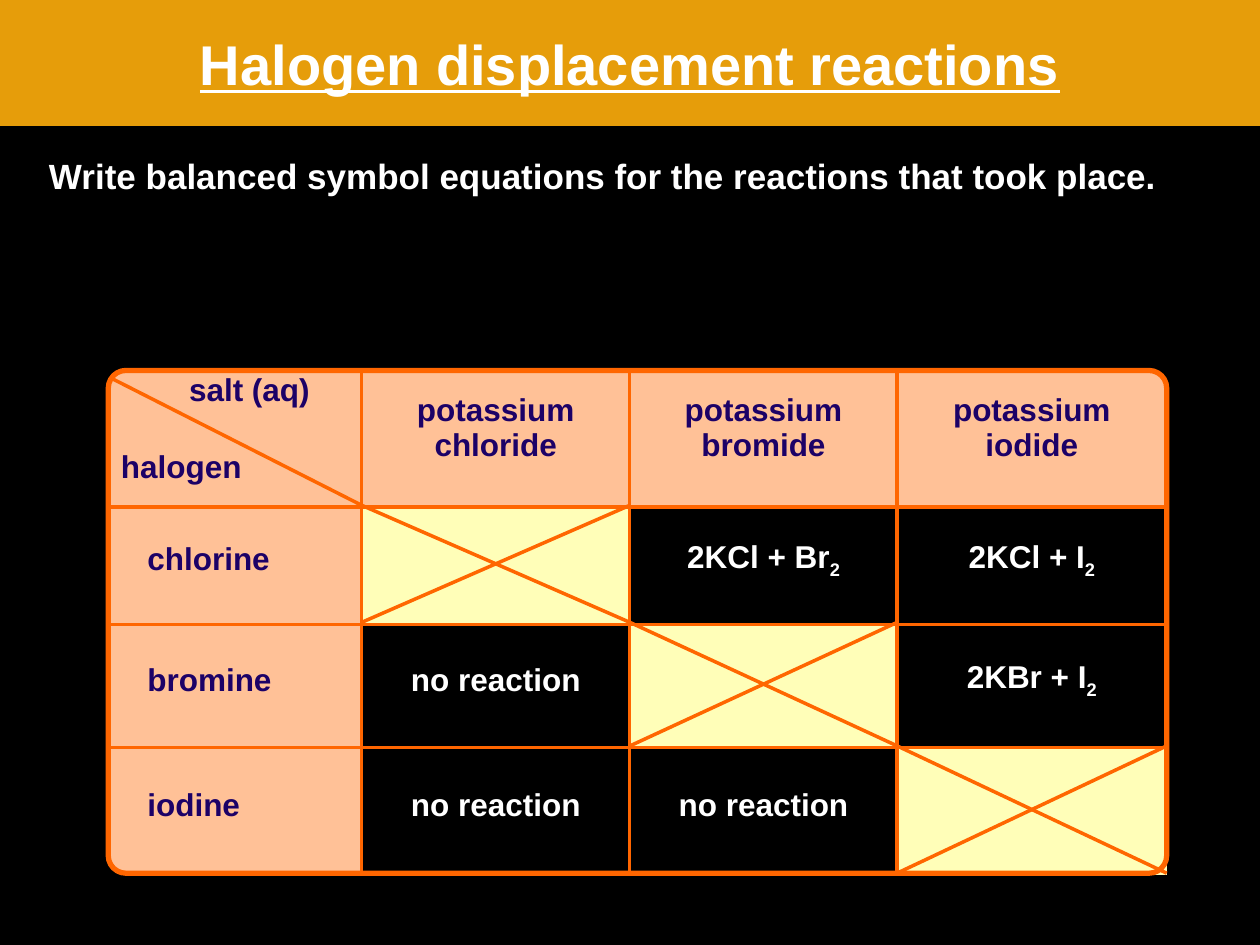
from lxml.etree import SubElement
from pptx import Presentation
from pptx.dml.color import RGBColor
from pptx.enum.shapes import MSO_CONNECTOR, MSO_SHAPE
from pptx.enum.text import MSO_ANCHOR, PP_ALIGN
from pptx.oxml.ns import qn
from pptx.util import Inches, Pt

BLACK, WHITE, NAVY = "000000", "FFFFFF", "1C0167"
GOLD, ORANGE, PEACH, CREAM = "E69D0A", "FF6600", "FFC197", "FFFEB8"

COLUMN_EDGES = [0.86, 2.87, 5, 7.12, 9.26]
ROW_EDGES = [2.94, 4.01, 4.94, 5.92, 6.93]
SALTS = ["potassium\vchloride", "potassium\vbromide", "potassium\viodide"]
# A None entry is a crossed-out cell; a trailing digit becomes a subscript.
REACTIONS = {
    "chlorine": [None, "2KCl + Br2", "2KCl + I2"],
    "bromine": ["no reaction", None, "2KBr + I2"],
    "iodine": ["no reaction", "no reaction", None],
}


def color(hex_string):
    return RGBColor.from_string(hex_string)


def format_font(font, size, hex_string):
    font.name = "Arial"
    font.size = Pt(size)
    font.bold = True
    font.color.rgb = color(hex_string)


def format_paragraph(paragraph, size, hex_string, alignment=PP_ALIGN.LEFT):
    paragraph.alignment = alignment
    for run in paragraph.runs:
        format_font(run.font, size, hex_string)


def add_title(slide, text):
    banner = slide.shapes.add_shape(
        MSO_SHAPE.RECTANGLE, 0, 0, Inches(10), Inches(1))
    banner.shadow.inherit = False
    banner.fill.solid()
    banner.fill.fore_color.rgb = color(GOLD)
    banner.line.fill.background()
    banner.text_frame.text = text
    banner.text_frame.vertical_anchor = MSO_ANCHOR.MIDDLE
    paragraph = banner.text_frame.paragraphs[0]
    format_paragraph(paragraph, 32, WHITE, PP_ALIGN.CENTER)
    paragraph.runs[0].font.underline = True


def add_instruction(slide, text):
    box = slide.shapes.add_textbox(
        Inches(0.29), Inches(1.18), Inches(9.52), Inches(0.44))
    box.text_frame.word_wrap = True
    box.text_frame.text = text
    format_paragraph(box.text_frame.paragraphs[0], 20, WHITE)


def add_rounded_panel(slide, fill=None, line=None):
    """Add a rounded rectangle around the whole grid."""
    left, top = COLUMN_EDGES[0], ROW_EDGES[0]
    panel = slide.shapes.add_shape(
        MSO_SHAPE.ROUNDED_RECTANGLE, Inches(left), Inches(top),
        Inches(COLUMN_EDGES[-1] - left), Inches(ROW_EDGES[-1] - top))
    panel.adjustments[0] = 0.035
    panel.shadow.inherit = False
    if fill:
        panel.fill.solid()
        panel.fill.fore_color.rgb = color(fill)
    else:
        panel.fill.background()
    if line:
        panel.line.color.rgb = color(line)
        panel.line.width = Pt(3)
    else:
        panel.line.fill.background()


def add_diagonal(slide, start, end):
    diagonal = slide.shapes.add_connector(
        MSO_CONNECTOR.STRAIGHT, *map(Inches, start + end))
    diagonal.line.color.rgb = color(ORANGE)
    diagonal.line.width = Pt(2)
    SubElement(diagonal._element.spPr, qn("a:effectLst"))


def set_borders(cell, sides):
    """Draw the named sides (L, R, T, B) and leave the others empty."""
    properties = cell._tc.get_or_add_tcPr()
    for index, side in enumerate("LRTB"):
        border = properties.makeelement(qn(f"a:ln{side}"), {"w": str(Pt(2))})
        if side in sides:
            fill = SubElement(border, qn("a:solidFill"))
            SubElement(fill, qn("a:srgbClr"), val=ORANGE)
        else:
            SubElement(border, qn("a:noFill"))
        properties.insert(index, border)


def set_cell(cell, text, hex_string, alignment=PP_ALIGN.CENTER,
             fill=None, left=0.1, bottom=0.09):
    cell.margin_left, cell.margin_right = Inches(left), Inches(0.1)
    cell.margin_top, cell.margin_bottom = 0, Inches(bottom)
    cell.vertical_anchor = MSO_ANCHOR.MIDDLE
    if fill:
        cell.fill.solid()
        cell.fill.fore_color.rgb = color(fill)
    else:
        cell.fill.background()
    cell.text_frame.text = text
    for paragraph in cell.text_frame.paragraphs:
        format_paragraph(paragraph, 18, hex_string, alignment)


def set_formula(cell, text):
    """Write white cell text, lowering a trailing digit."""
    base = text.rstrip("0123456789")
    set_cell(cell, base, WHITE, fill=BLACK)
    if base != text:
        subscript = cell.text_frame.paragraphs[0].add_run()
        subscript.text = text[len(base):]
        format_font(subscript.font, 18, WHITE)
        subscript.font._element.set("baseline", "-25000")


def set_corner_cell(cell):
    set_cell(cell, "salt (aq)\nhalogen", NAVY, PP_ALIGN.LEFT, bottom=0.15)
    salt, halogen = cell.text_frame.paragraphs
    salt._p.get_or_add_pPr().set("marL", str(Inches(0.54)))
    halogen.space_before = Pt(24)


def add_reaction_table(slide):
    left, top = COLUMN_EDGES[0], ROW_EDGES[0]
    frame = slide.shapes.add_table(
        4, 4, Inches(left), Inches(top),
        Inches(COLUMN_EDGES[-1] - left), Inches(ROW_EDGES[-1] - top))
    table = frame.table
    table.first_row = table.horz_banding = False
    for index in range(4):
        table.columns[index].width = Inches(
            COLUMN_EDGES[index + 1] - COLUMN_EDGES[index])
        table.rows[index].height = Inches(
            ROW_EDGES[index + 1] - ROW_EDGES[index])

    set_corner_cell(table.cell(0, 0))
    for column, salt in enumerate(SALTS, 1):
        set_cell(table.cell(0, column), salt, NAVY, bottom=0.17)
    for row, (halogen, results) in enumerate(REACTIONS.items(), 1):
        set_cell(table.cell(row, 0), halogen, NAVY, PP_ALIGN.LEFT, left=0.31)
        for column, result in enumerate(results, 1):
            cell = table.cell(row, column)
            if result is None:
                set_cell(cell, "", NAVY, fill=CREAM)
            else:
                set_formula(cell, result)

    for row in range(4):
        for column in range(4):
            inner = {"L": column > 0, "R": column < 3,
                     "T": row > 0, "B": row < 3}
            set_borders(table.cell(row, column),
                        [side for side in inner if inner[side]])


def add_diagonals(slide):
    """Split the corner cell and cross out the cells without a reaction."""
    add_diagonal(slide, (0.88, 3), (COLUMN_EDGES[1], ROW_EDGES[1]))
    for row, results in enumerate(REACTIONS.values(), 1):
        column = results.index(None) + 1
        left, right = COLUMN_EDGES[column:column + 2]
        top, bottom = ROW_EDGES[row:row + 2]
        add_diagonal(slide, (left, top), (right, bottom))
        add_diagonal(slide, (right, top), (left, bottom))


def main():
    presentation = Presentation()
    presentation.slide_width = Inches(10)
    presentation.slide_height = Inches(7.5)
    slide = presentation.slides.add_slide(presentation.slide_layouts[6])
    slide.background.fill.solid()
    slide.background.fill.fore_color.rgb = color(BLACK)

    add_title(slide, "Halogen displacement reactions")
    add_instruction(slide, "Write balanced symbol equations for the "
                           "reactions that took place.")
    add_rounded_panel(slide, fill=PEACH)
    add_reaction_table(slide)
    add_diagonals(slide)
    add_rounded_panel(slide, line=ORANGE)
    presentation.save("out.pptx")


if __name__ == "__main__":
    main()
